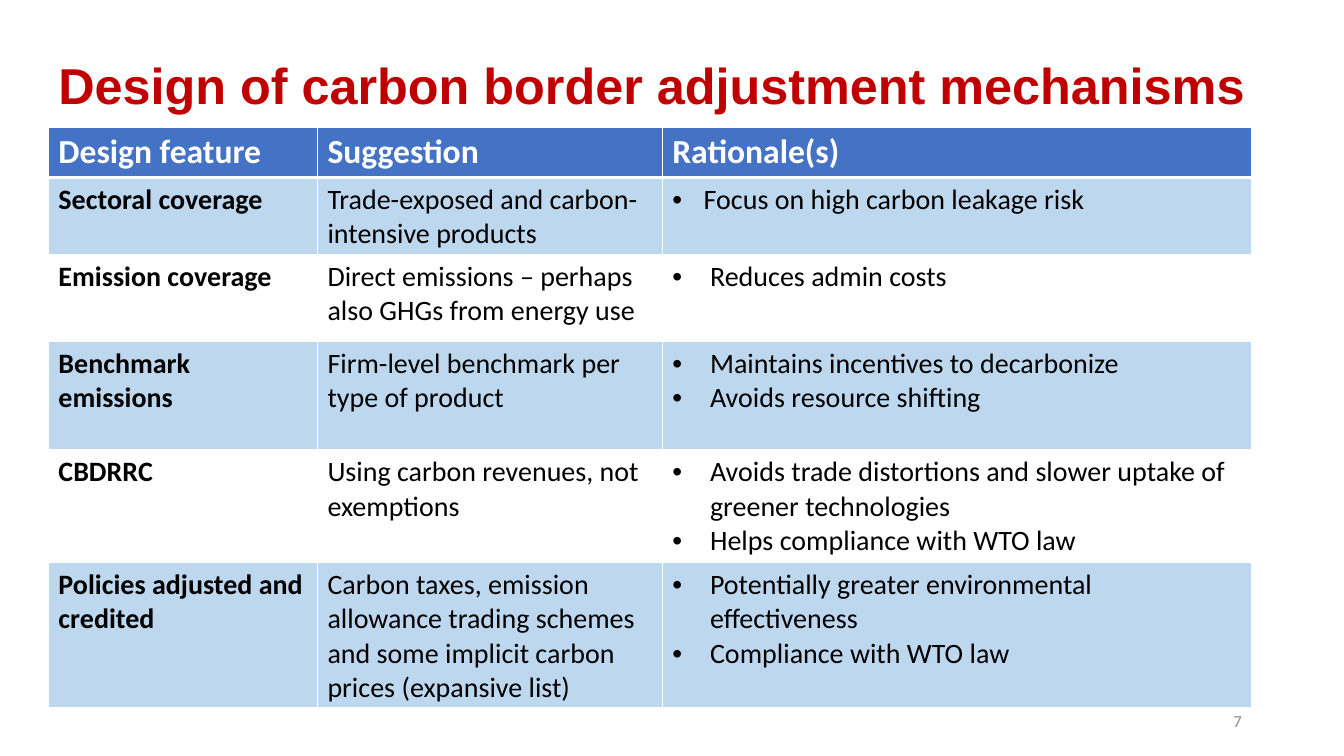
from lxml import etree
from pptx import Presentation
from pptx.dml.color import RGBColor as Rgb
from pptx.enum.text import MSO_ANCHOR as Anchor, PP_ALIGN as Align
from pptx.oxml.ns import qn
from pptx.util import Cm, Pt

COLORS = {
    "title": "C00000",
    "header": "4472C4",
    "band": "BDD7EE",
    "white": "FFFFFF",
    "text": "000000",
    "number": "8C8C8C",
}
COLUMN_WIDTHS = [6.78, 8.69, 14.86]
ROW_HEIGHTS = [1.27, 1.91, 2.18, 2.74, 2.84, 3.12]
HEADINGS = ["Design feature", "Suggestion", "Rationale(s)"]
FEATURES = [
    ("Sectoral coverage", "Trade-exposed and carbon-intensive products",
     ["Focus on high carbon leakage risk"]),
    ("Emission coverage", "Direct emissions – perhaps also GHGs from energy use",
     ["Reduces admin costs"]),
    ("Benchmark emissions", "Firm-level benchmark per type of product",
     ["Maintains incentives to decarbonize", "Avoids resource shifting"]),
    ("CBDRRC", "Using carbon revenues, not exemptions",
     ["Avoids trade distortions and slower uptake of greener technologies",
      "Helps compliance with WTO law"]),
    ("Policies adjusted and credited",
     "Carbon taxes, emission allowance trading schemes and some implicit "
     "carbon prices (expansive list)",
     ["Potentially greater environmental effectiveness",
      "Compliance with WTO law"]),
]


class SlideBuilder:
    """Holds the style and the current slide."""

    heading_font = "Arial"
    body_font = "Calibri"

    def __init__(self, page):
        self.page = page

    def style(self, para, size, color, bold=False, font=body_font):
        for span in para.runs:
            span.font.name = font
            span.font.size = Pt(size)
            span.font.bold = bold
            span.font.color.rgb = Rgb.from_string(COLORS[color])

    def text(self, words, left, top, width, height, align=Align.LEFT, **style):
        box = self.page.shapes.add_textbox(Cm(left), Cm(top), Cm(width), Cm(height))
        frame = box.text_frame
        frame.word_wrap = True
        frame.vertical_anchor = Anchor.MIDDLE
        frame.text = words
        para = frame.paragraphs[0]
        para.alignment = align
        self.style(para, **style)
        return para

    def table(self, left, top, widths, heights):
        frame = self.page.shapes.add_table(
            len(heights), len(widths), Cm(left), Cm(top),
            Cm(sum(widths)), Cm(sum(heights)))
        table = frame.table
        table.horz_banding = False
        for column, width in zip(table.columns, widths):
            column.width = Cm(width)
        for row, height in zip(table.rows, heights):
            row.height = Cm(height)
        return table

    def cell(self, cell, lines, fill, bottom=1, indent=0, **style):
        cell.text_frame.text = "\n".join(lines)
        for para in cell.text_frame.paragraphs:
            self.style(para, **style)
            if indent:
                self.bullet(para, indent)
        cell.fill.solid()
        cell.fill.fore_color.rgb = Rgb.from_string(COLORS[fill])
        self.borders(cell, bottom)

    def bullet(self, para, indent):
        props = para._p.get_or_add_pPr()
        props.set("marL", str(Cm(indent)))
        props.set("indent", str(-Cm(indent)))
        etree.SubElement(props, qn("a:buFont")).set("typeface", "Arial")
        etree.SubElement(props, qn("a:buChar")).set("char", "•")

    def borders(self, cell, bottom):
        """Draw white cell edges; the bottom one has its own weight."""
        props = cell._tc.get_or_add_tcPr()
        edges = [("a:lnL", 1), ("a:lnR", 1), ("a:lnT", 1), ("a:lnB", bottom)]
        for place, (tag, weight) in enumerate(edges):
            line = etree.Element(qn(tag), w=str(Pt(weight)))
            solid = etree.SubElement(line, qn("a:solidFill"))
            etree.SubElement(solid, qn("a:srgbClr")).set("val", COLORS["white"])
            props.insert(place, line)


def main():
    deck = Presentation()
    deck.slide_width, deck.slide_height = Cm(33.87), Cm(19.05)
    builder = SlideBuilder(deck.slides.add_slide(deck.slide_layouts[6]))

    title = builder.text("Design of carbon border adjustment mechanisms",
                         1.22, 0.38, 30.89, 3.68, size=36, color="title",
                         bold=True, font=builder.heading_font)
    title.line_spacing = 0.9

    table = builder.table(1.22, 3.2, COLUMN_WIDTHS, ROW_HEIGHTS)
    for column, heading in enumerate(HEADINGS):
        builder.cell(table.cell(0, column), [heading], "header", bottom=3,
                     size=24, color="white", bold=True)
    for row, (feature, suggestion, rationales) in enumerate(FEATURES, start=1):
        fill = "band" if row % 2 else "white"
        body = {"fill": fill, "size": 20, "color": "text"}
        builder.cell(table.cell(row, 0), [feature], bold=True, **body)
        builder.cell(table.cell(row, 1), [suggestion], **body)
        builder.cell(table.cell(row, 2), rationales,
                     indent=0.79 if row == 1 else 0.95, **body)

    builder.text("7", 23.93, 17.65, 7.62, 1.02, align=Align.RIGHT,
                 size=12, color="number")
    deck.save("out.pptx")


if __name__ == "__main__":
    main()
